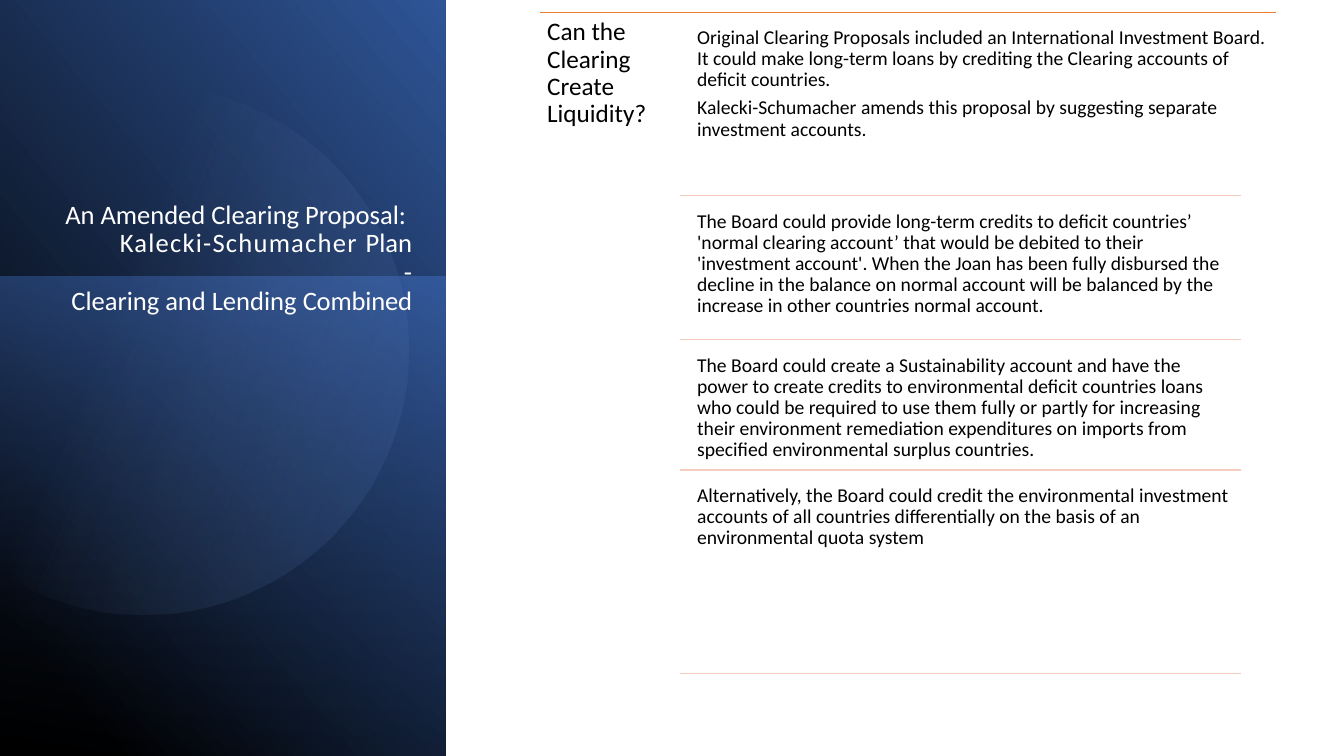
from dataclasses import dataclass
from math import cos, radians, sin

from pptx import Presentation
from pptx.dml.color import RGBColor
from pptx.enum.shapes import MSO_CONNECTOR, MSO_SHAPE
from pptx.enum.text import MSO_ANCHOR, PP_ALIGN
from pptx.oxml import parse_xml
from pptx.oxml.ns import nsdecls, qn
from pptx.util import Cm, Pt

RECT = MSO_SHAPE.RECTANGLE
STRAIGHT = MSO_CONNECTOR.STRAIGHT
TOP = MSO_ANCHOR.TOP
RIGHT = PP_ALIGN.RIGHT


@dataclass
class Theme:
    font: str = "Calibri"
    title_size: float = 19
    heading_size: float = 18
    body_size: float = 14
    light: str = "FFFFFF"
    dark: str = "000000"
    accent: str = "ED7D31"
    rule: str = "F6CCBE"
    navy: str = "203864"
    blue: str = "2F5597"
    bright: str = "4472C4"
    pale: str = "8FAADC"


theme = Theme()


def format_run(r, size, color):
    r.font.name = theme.font
    r.font.size = Pt(size)
    r.font.color.rgb = RGBColor.from_string(color)


def format_panel(sp, rotation, angle, stops):
    sp.rotation = rotation
    sp.shadow.inherit = False
    sp.line.fill.background()
    sp.fill.background()
    marks = "".join(
        f'<a:gs pos="{pos * 1000}"><a:srgbClr val="{color}">'
        f'<a:alpha val="{alpha * 1000}"/></a:srgbClr></a:gs>'
        for pos, color, alpha in stops
    )
    grad = parse_xml(
        f'<a:gradFill {nsdecls("a")} rotWithShape="1"><a:gsLst>{marks}</a:gsLst>'
        f'<a:lin ang="{angle * 60000}" scaled="0"/></a:gradFill>'
    )
    spPr = sp._element.spPr
    spPr.replace(spPr.find(qn("a:noFill")), grad)


prs = Presentation()
prs.slide_width = Cm(33.87)
prs.slide_height = Cm(19.05)
s = prs.slides.add_slide(prs.slide_layouts[5])

sp = s.shapes.add_shape(RECT, Cm(-3.94), Cm(3.94), Cm(19.1), Cm(11.23))
format_panel(sp, 90, 310, [(11, theme.dark, 100), (100, theme.blue, 100)])
sp._element.spPr.find(qn("a:xfrm")).set("flipH", "1")

sp = s.shapes.add_shape(RECT, Cm(-0.43), Cm(7.39), Cm(12.09), Cm(11.23))
format_panel(sp, 270, 190, [(0, theme.bright, 50), (100, theme.navy, 0)])

radius = 6.68
steps = 120
arc_start, arc_end = 135.5, 381.2
arc = []
for i in range(steps + 1):
    a = radians(arc_start + (arc_end - arc_start) * i / steps)
    arc.append((Cm(radius * (1 + cos(a))), Cm(radius * (1 + sin(a)))))
builder = s.shapes.build_freeform(*arc[0])
builder.add_line_segments(arc[1:], close=True)
sp = builder.convert_to_shape(Cm(-2.08), Cm(3.33))
format_panel(sp, 101.6, 280, [(39, theme.pale, 0), (100, theme.blue, 26)])

title_lines = [
    [("An Amended Clearing Proposal: ", 0)],
    [("Kalecki-Schumacher ", 90), ("Plan", 0)],
    [("-", 0)],
    [("Clearing and Lending ", 0), ("Combined", -10)],
]
title = s.shapes.title
title.left, title.top, title.width, title.height = Cm(1.32), Cm(1.32), Cm(9.32), Cm(16.69)
tf = title.text_frame
tf.word_wrap = True
tf.vertical_anchor = TOP
tf.margin_top = Cm(3.75)
for i, line in enumerate(title_lines):
    p = tf.add_paragraph() if i else tf.paragraphs[0]
    p.alignment = RIGHT
    p.line_spacing = 0.9
    p.space_before = Pt(0)
    for text, spacing in line:
        r = p.add_run()
        r.text = text
        format_run(r, theme.title_size, theme.light)
        r._r.get_or_add_rPr().set("spc", str(spacing))
s.shapes._spTree.append(title._element)

rule_tops = [0.3, 4.93, 8.56, 11.84, 16.97]
for i, y in enumerate(rule_tops):
    x1, x2, color, width = (17.15, 31.27, theme.rule, 1) if i else (13.61, 32.16, theme.accent, 0.5)
    c = s.shapes.add_connector(STRAIGHT, Cm(x1), Cm(y), Cm(x2), Cm(y))
    c.line.color.rgb = RGBColor.from_string(color)
    c.line.width = Pt(width)
    c._element.spPr.append(parse_xml(f'<a:effectLst {nsdecls("a")}/>'))

answers = [
    "Original Clearing Proposals included an International Investment Board. "
    "It could make long-term loans by crediting the Clearing accounts of deficit countries.\n"
    "Kalecki-Schumacher amends this proposal by suggesting separate investment accounts.",
    "The Board could provide long-term credits to deficit countries’ 'normal clearing account’ "
    "that would be debited to their 'investment account'. When the Joan has been fully disbursed "
    "the decline in the balance on normal account will be balanced by the increase in other "
    "countries normal account.",
    "The Board could create a Sustainability account and have the power to create credits to "
    "environmental deficit countries loans who could be required to use them fully or partly for "
    "increasing their environment remediation expenditures on imports from specified "
    "environmental surplus countries.",
    "Alternatively, the Board could credit the environmental investment accounts of all countries "
    "differentially on the basis of an environmental quota system",
]
gap = 0.24
boxes = [("Can the Clearing Create Liquidity?", 13.61, 0.3, 3.53, 16.94, 0.18, theme.heading_size)]
for i, text in enumerate(answers):
    top = rule_tops[i] + gap
    width = 13.87 if i else 14.7
    boxes.append((text, 17.42, top, width, rule_tops[i + 1] - top, 0.15, theme.body_size))

for text, left, top, width, height, inset, size in boxes:
    tf = s.shapes.add_textbox(Cm(left), Cm(top), Cm(width), Cm(height)).text_frame
    tf.word_wrap = True
    tf.vertical_anchor = TOP
    tf.margin_left = tf.margin_right = tf.margin_top = tf.margin_bottom = Cm(inset)
    tf.text = text
    for p in tf.paragraphs:
        p.line_spacing = 0.9
        p.space_after = Pt(5)
        format_run(p.runs[0], size, theme.dark)

prs.save("out.pptx")
